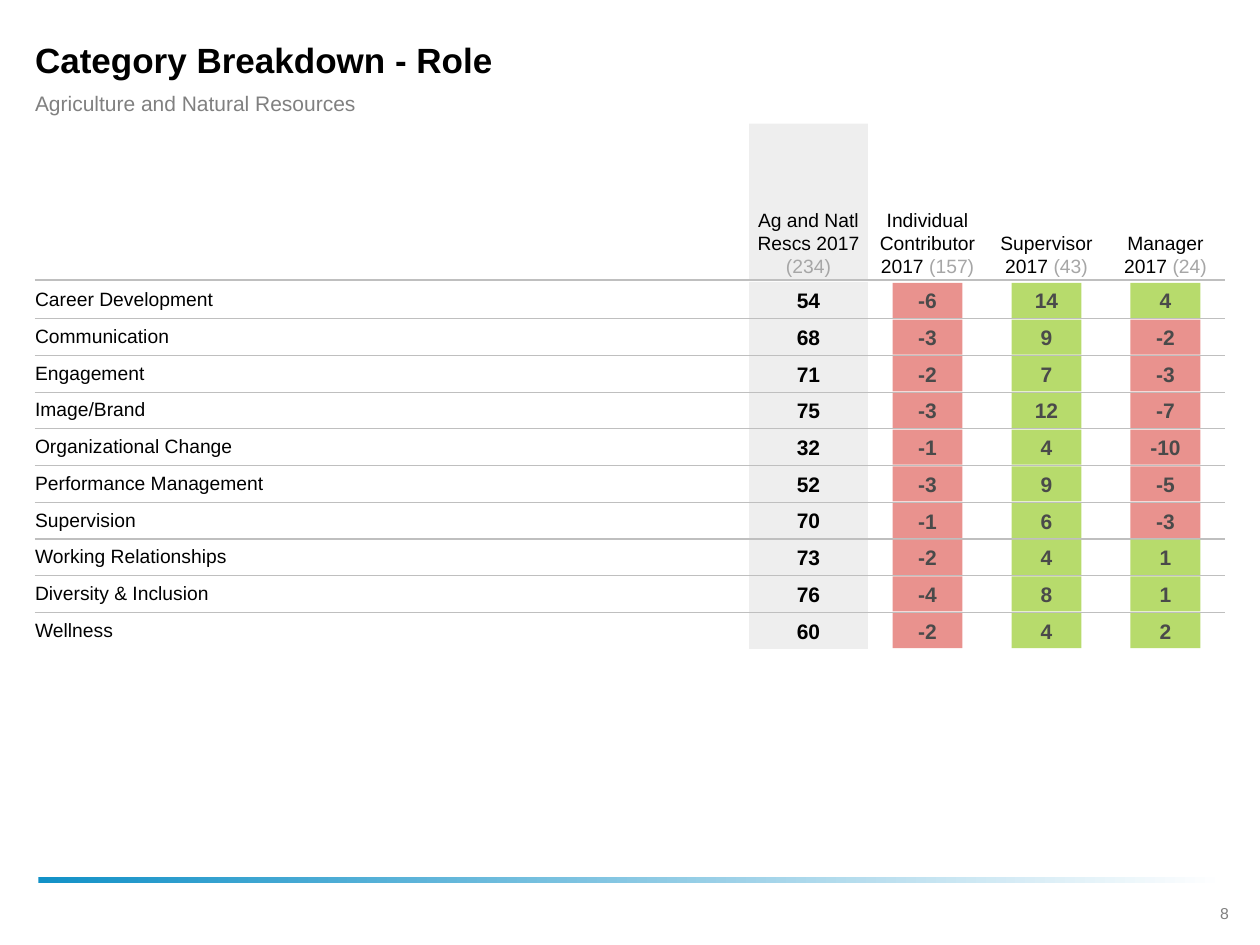
from pptx import Presentation
from pptx.dml.color import RGBColor
from pptx.enum import shapes as s, text as t
from pptx.oxml.ns import qn
from pptx.util import Pt

TITLE = "Category Breakdown - Role"
SUB = "Agriculture and Natural Resources"
PAGE = "8"
HEADS = [
    ("Ag and Natl Rescs 2017 ", "(234)"),
    ("Individual Contributor 2017 ", "(157)"),
    ("Supervisor 2017 ", "(43)"),
    ("Manager 2017 ", "(24)"),
]
ROWS = [
    ("Career Development", 54, (-6, 14, 4)),
    ("Communication", 68, (-3, 9, -2)),
    ("Engagement", 71, (-2, 7, -3)),
    ("Image/Brand", 75, (-3, 12, -7)),
    ("Organizational Change", 32, (-1, 4, -10)),
    ("Performance Management", 52, (-3, 9, -5)),
    ("Supervision", 70, (-1, 6, -3)),
    ("Working Relationships", 73, (-2, 4, 1)),
    ("Diversity & Inclusion", 76, (-4, 8, 1)),
    ("Wellness", 60, (-2, 4, 2)),
]

FONT = "Arial"
BLACK, GREY, PALE, DARK = "000000", "808080", "A6A6A6", "4A4A4A"
BAND, RULE, RED, GREEN = "EEEEEE", "BFBFBF", "E9928E", "B7DB6C"
LEFT, WIDE = 20, 680
COL_X, COL_W = 428, 68
HEAD_Y, HEAD_H = 70.6, 90
ROW_Y, ROW_H = 161.2, 20.97
TILE_W, TILE_H = 40, 20.1
MID, LOW = t.MSO_ANCHOR.MIDDLE, t.MSO_ANCHOR.BOTTOM
START, MIDST = t.PP_ALIGN.LEFT, t.PP_ALIGN.CENTER

prs = Presentation()
prs.slide_width, prs.slide_height = Pt(720), Pt(540)
slide = prs.slides.add_slide(prs.slide_layouts[5])
items = slide.shapes


def color(code):
    return RGBColor.from_string(code)


def write(shape, runs, size=11, bold=False, align=START, anchor=MID,
          pad=(0, 0, 0, 0), wrap=True):
    frame = shape.text_frame
    frame.auto_size = t.MSO_AUTO_SIZE.NONE
    frame.word_wrap = wrap
    frame.vertical_anchor = anchor
    (frame.margin_left, frame.margin_top,
     frame.margin_right, frame.margin_bottom) = map(Pt, pad)
    para = frame.paragraphs[0]
    para.alignment = align
    for words, code in runs:
        run = para.add_run()
        run.text = words
        font = run.font
        font.name, font.size, font.bold = FONT, Pt(size), bold
        font.color.rgb = color(code)


def box(x, y, w, h):
    return items.add_textbox(Pt(x), Pt(y), Pt(w), Pt(h))


def rect(x, y, w, h, code=None):
    shape = items.add_shape(s.MSO_SHAPE.RECTANGLE, Pt(x), Pt(y), Pt(w), Pt(h))
    shape.shadow.inherit = False
    shape.line.fill.background()
    if code:
        shape.fill.solid()
        shape.fill.fore_color.rgb = color(code)
    return shape


def rule(y, width):
    line = items.add_connector(s.MSO_CONNECTOR.STRAIGHT, Pt(LEFT), Pt(y),
                               Pt(LEFT + WIDE), Pt(y))
    line.line.color.rgb = color(RULE)
    line.line.width = Pt(width)
    props = line._element.spPr
    props.append(props.makeelement(qn("a:effectLst"), {}))


title = items.title
title.left, title.top, title.width, title.height = map(Pt, (LEFT, 20.4, WIDE, 27.4))
write(title, [(TITLE, BLACK)], size=20, bold=True, pad=(0, 0, 25, 0))
write(box(LEFT, 51.2, WIDE, 15), [(SUB, GREY)], size=12, pad=(0, 0, 25, 0))

bar = rect(22, 501, 678, 3.6)
bar.fill.gradient()
bar.fill.gradient_angle = 0
for stop, code in zip(bar.fill.gradient_stops, ("1291C7", "FFFFFF")):
    stop.color.rgb = color(code)
write(box(681, 512.6, 37.4, 18), [(PAGE, "7F7F7F")], size=9, align=MIDST,
      pad=(7.2, 3.6, 7.2, 3.6))

rect(COL_X, HEAD_Y, COL_W, HEAD_H, BAND)
for i in range(len(ROWS)):
    rect(COL_X, ROW_Y + i * ROW_H, COL_W, ROW_H, BAND)

rule(160, 1.5)
for i, (name, count) in enumerate(HEADS):
    write(box(COL_X + i * COL_W, HEAD_Y, COL_W, HEAD_H),
          [(name, BLACK), (count, PALE)], align=MIDST, anchor=LOW, pad=(2,) * 4)

for i, (name, score, gaps) in enumerate(ROWS):
    y = ROW_Y + i * ROW_H
    if i:
        rule(y, 0.75)
    write(box(LEFT, y + 1.5, COL_X - LEFT, 16.6), [(name, BLACK)])
    write(box(COL_X, y, COL_W, ROW_H), [(str(score), BLACK)], size=12,
          bold=True, align=MIDST, pad=(2,) * 4)
    for j, gap in enumerate(gaps, 1):
        x = COL_X + j * COL_W + (COL_W - TILE_W) / 2
        tile = rect(x, y + 0.4, TILE_W, TILE_H, RED if gap < 0 else GREEN)
        write(tile, [(str(gap), DARK)], size=12, bold=True, align=MIDST,
              pad=(0, 3.6, 0, 3.6), wrap=False)

prs.save("out.pptx")
